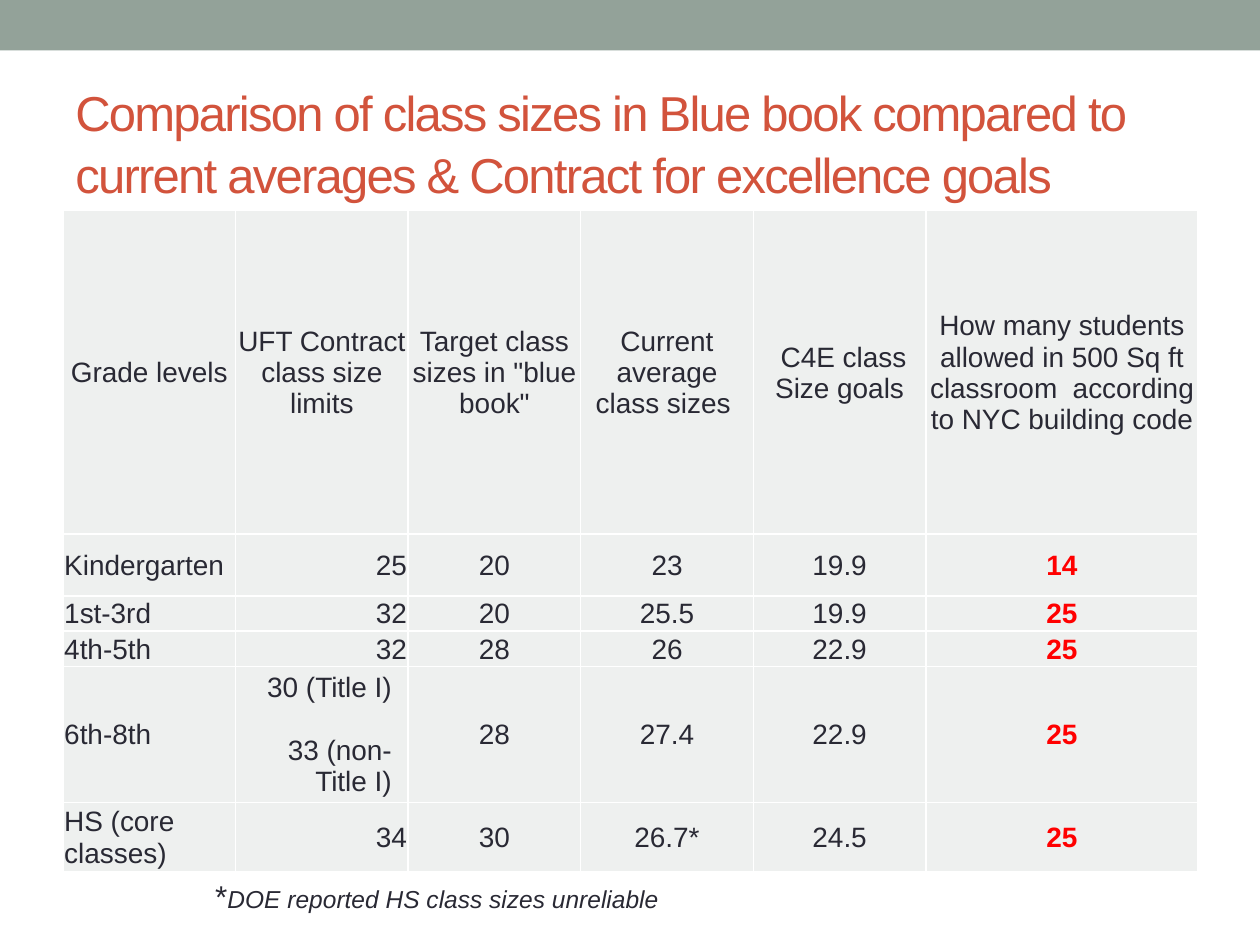
import pptx
import pptx.dml.color
import pptx.enum.shapes
import pptx.enum.text
import pptx.oxml
import pptx.oxml.ns
import pptx.util
from pptx.util import Inches

RGBColor = pptx.dml.color.RGBColor
Align = pptx.enum.text.PP_ALIGN
Anchor = pptx.enum.text.MSO_ANCHOR

BAND_GREEN = RGBColor(0x93, 0xA2, 0x99)
TITLE_RED = RGBColor(0xD2, 0x53, 0x3C)
TEXT_DARK = RGBColor(0x29, 0x29, 0x34)
LIMIT_RED = RGBColor(0xFF, 0x00, 0x00)
CELL_GRAY = RGBColor(0xEE, 0xF0, 0xEF)
FONT = "Arial"

TITLE = ("Comparison of class sizes in Blue book compared to current "
         "averages & Contract for excellence goals")
ROWS = [
    ["Grade levels", "UFT Contract class size limits",
     'Target class sizes in "blue book"', "Current average class sizes ",
     " C4E class Size goals",
     "How many students allowed in 500 Sq ft classroom  according to NYC building code "],
    ["Kindergarten", "25", "20", "23", "19.9", "14"],
    ["1st-3rd", "32", "20", "25.5", "19.9", "25"],
    ["4th-5th", "32", "28", "26", "22.9", "25"],
    ["6th-8th", "30 (Title I)\n33 (non-Title I)", "28", "27.4", "22.9", "25"],
    ["HS (core classes)", "34", "30", "26.7*", "24.5", "25"],
]
COLUMN_WIDTHS = [1.37] * 5 + [2.16]
ROW_HEIGHTS = [2.57, 0.49, 0.28, 0.28, 1.08, 0.55]
BODY_ALIGNMENTS = [Align.LEFT, Align.RIGHT] + [Align.CENTER] * 4


def set_font(font, size, color):
    font.name = FONT
    font.size = pptx.util.Pt(size)
    font.color.rgb = color


def add_band(slide, left, top, width, height):
    band = slide.shapes.add_shape(
        pptx.enum.shapes.MSO_SHAPE.RECTANGLE, left, top, width, height)
    band.shadow.inherit = False
    band.fill.solid()
    band.fill.fore_color.rgb = BAND_GREEN
    band.line.fill.background()


def add_title(slide, left, top, width, height):
    frame = slide.shapes.add_textbox(left, top, width, height).text_frame
    frame.word_wrap = True
    frame.vertical_anchor = Anchor.MIDDLE
    paragraph = frame.paragraphs[0]
    paragraph.text = TITLE
    paragraph.line_spacing = 1.05
    set_font(paragraph.font, 28, TITLE_RED)
    # Tighten the letters by one point
    paragraph.runs[0].font._element.set("spc", "-100")


def add_borders(cell):
    """Draw a white one-point line on each side of the cell."""
    properties = cell._tc.get_or_add_tcPr()
    for position, side in enumerate(("lnL", "lnR", "lnT", "lnB")):
        properties.insert(position, pptx.oxml.parse_xml(
            f'<a:{side} {pptx.oxml.ns.nsdecls("a")} w="12700">'
            '<a:solidFill><a:srgbClr val="FFFFFF"/></a:solidFill>'
            f'</a:{side}>'))


def fill_cell(cell, text, alignment, is_limit):
    cell.fill.solid()
    cell.fill.fore_color.rgb = CELL_GRAY
    add_borders(cell)
    cell.vertical_anchor = Anchor.MIDDLE
    cell.margin_left = cell.margin_right = cell.margin_top = Inches(0.01)
    cell.margin_bottom = 0
    cell.text = text
    for number, paragraph in enumerate(cell.text_frame.paragraphs):
        paragraph.alignment = alignment
        set_font(paragraph.font, 16, LIMIT_RED if is_limit else TEXT_DARK)
        paragraph.font.bold = is_limit
        if number:
            paragraph.space_before = pptx.util.Pt(18.4)


def add_class_size_table(slide, left, top, width, height):
    table = slide.shapes.add_table(
        len(ROWS), len(COLUMN_WIDTHS), left, top, width, height).table
    table.first_row = table.horz_banding = False
    for column, column_width in zip(table.columns, COLUMN_WIDTHS):
        column.width = Inches(column_width)
    for row, row_height in zip(table.rows, ROW_HEIGHTS):
        row.height = Inches(row_height)
    last_column = len(COLUMN_WIDTHS) - 1
    for r, texts in enumerate(ROWS):
        for c, text in enumerate(texts):
            alignment = BODY_ALIGNMENTS[c] if r else Align.CENTER
            fill_cell(table.cell(r, c), text, alignment, r > 0 and c == last_column)
    # Inset the first limit of the 6th-8th grades from the right edge
    title_one = table.cell(4, 1).text_frame.paragraphs[0]
    title_one._p.get_or_add_pPr().set("marR", str(Inches(0.12)))


def add_footnote(slide, left, top, width, height):
    frame = slide.shapes.add_textbox(left, top, width, height).text_frame
    frame.word_wrap = False
    frame.auto_size = pptx.enum.text.MSO_AUTO_SIZE.SHAPE_TO_FIT_TEXT
    paragraph = frame.paragraphs[0]
    for text, size, italic in (("*", 18, False),
                               ("DOE reported HS class sizes unreliable", 14, True)):
        run = paragraph.add_run()
        run.text = text
        set_font(run.font, size, TEXT_DARK)
        run.font.italic = italic


def main():
    presentation = pptx.Presentation()
    presentation.slide_width = Inches(10)
    presentation.slide_height = Inches(7.5)
    slide = presentation.slides.add_slide(presentation.slide_layouts[6])
    add_band(slide, 0, 0, Inches(10), Inches(0.4))
    add_title(slide, Inches(0.5), Inches(0.58), Inches(9), Inches(1.08))
    add_class_size_table(slide, Inches(0.5), Inches(1.67), Inches(9), Inches(5.24))
    add_footnote(slide, Inches(1.61), Inches(6.91), Inches(3.74), Inches(0.4))
    presentation.save("out.pptx")


if __name__ == "__main__":
    main()
